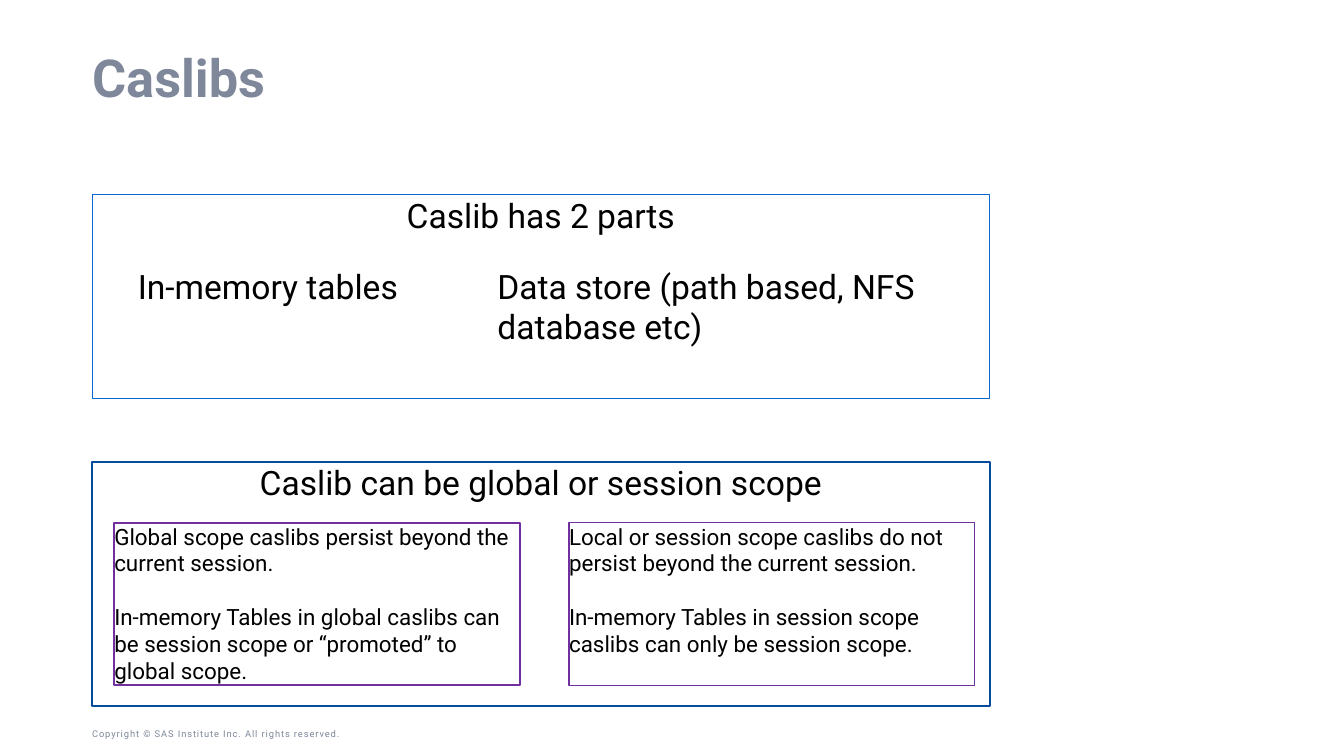
from dataclasses import dataclass

from pptx import Presentation
from pptx.dml.color import RGBColor
from pptx.enum.shapes import MSO_SHAPE
from pptx.enum.text import MSO_ANCHOR, PP_ALIGN
from pptx.util import Cm, Pt

RECTANGLE = MSO_SHAPE.RECTANGLE
LEFT, CENTER = PP_ALIGN.LEFT, PP_ALIGN.CENTER
TOP, MIDDLE, BOTTOM = MSO_ANCHOR.TOP, MSO_ANCHOR.MIDDLE, MSO_ANCHOR.BOTTOM

FONT = "Roboto"
COLORS = {
    "heading": "7E889A",
    "text": "000000",
    "parts": "0766D1",
    "scope": "054C9D",
    "detail": "7030A0",
}

MARGIN = 3.48
PANEL_WIDTH = 33.93
PARTS_TOP = 10.06
DETAIL_TOP, DETAIL_WIDTH, DETAIL_HEIGHT = 19.76, 15.32, 6.15


@dataclass(frozen=True)
class TextBlock:
    """Text with its place in centimetres; a line color makes it a frame."""

    left: float
    top: float
    width: float
    height: float
    paragraphs: tuple[str, ...]
    size: float = 36
    color: str = "text"
    bold: bool = False
    align: PP_ALIGN = LEFT
    anchor: MSO_ANCHOR = TOP
    line_spacing: float = 1.0
    letter_spacing: float = 0
    line_color: str | None = None
    line_width: float = 1


BLOCKS = (
    TextBlock(MARGIN, 27.38, 13.97, 0.56,
              ("Copyright © SAS Institute Inc. All rights reserved.",),
              size=10, color="heading", anchor=BOTTOM, letter_spacing=1),
    TextBlock(MARGIN, 1.98, 43.82, 2.16, ("Caslibs",), size=56, color="heading",
              bold=True, anchor=MIDDLE, line_spacing=0.9),
    TextBlock(5.21, PARTS_TOP, 10.92, 1.55, ("In-memory tables",)),
    TextBlock(18.8, PARTS_TOP, 15.95, 3.07,
              ("Data store (path based, NFS database etc)",)),
    TextBlock(MARGIN, 7.37, PANEL_WIDTH, 7.7, ("Caslib has 2 parts",),
              align=CENTER, line_color="parts"),
    TextBlock(MARGIN, 17.45, PANEL_WIDTH, 9.25,
              ("Caslib can be global or session scope",),
              align=CENTER, line_color="scope", line_width=2.25),
    TextBlock(4.32, DETAIL_TOP, DETAIL_WIDTH, DETAIL_HEIGHT,
              ("Global scope caslibs persist beyond the current session.",
               "In-memory Tables in global caslibs can be session scope or "
               "“promoted” to global scope."),
              size=24, line_color="detail", line_width=2.25),
    TextBlock(21.51, DETAIL_TOP, DETAIL_WIDTH, DETAIL_HEIGHT,
              ("Local or session scope caslibs do not persist beyond the "
               "current session.",
               "In-memory Tables in session scope caslibs can only be "
               "session scope."),
              size=24, line_color="detail", line_width=1.5),
)


def rgb(name: str) -> RGBColor:
    return RGBColor.from_string(COLORS[name])


def write_text(text_frame, block: TextBlock) -> None:
    text_frame.word_wrap = True
    text_frame.vertical_anchor = block.anchor
    text_frame.margin_left = text_frame.margin_right = 0
    text_frame.margin_top = text_frame.margin_bottom = 0
    text_frame.text = "\n".join(block.paragraphs)
    for index, paragraph in enumerate(text_frame.paragraphs):
        paragraph.alignment = block.align
        paragraph.line_spacing = block.line_spacing
        if index:
            paragraph.space_before = Pt(block.size * 1.2)
        for run in paragraph.runs:
            run.font.name = FONT
            run.font.size = Pt(block.size)
            run.font.bold = block.bold
            run.font.color.rgb = rgb(block.color)
            if block.letter_spacing:
                run._r.get_or_add_rPr().set("spc", str(round(block.letter_spacing * 100)))


def add_block(slide, block: TextBlock) -> None:
    place = [Cm(value) for value in (block.left, block.top, block.width, block.height)]
    if block.line_color:
        shape = slide.shapes.add_shape(RECTANGLE, *place)
        shape.shadow.inherit = False
        shape.fill.background()
        shape.line.color.rgb = rgb(block.line_color)
        shape.line.width = Pt(block.line_width)
    else:
        shape = slide.shapes.add_textbox(*place)
    write_text(shape.text_frame, block)


def main() -> None:
    presentation = Presentation()
    presentation.slide_width = Cm(50.8)
    presentation.slide_height = Cm(28.58)
    slide = presentation.slides.add_slide(presentation.slide_layouts[6])
    for block in BLOCKS:
        add_block(slide, block)
    presentation.save("out.pptx")


if __name__ == "__main__":
    main()
